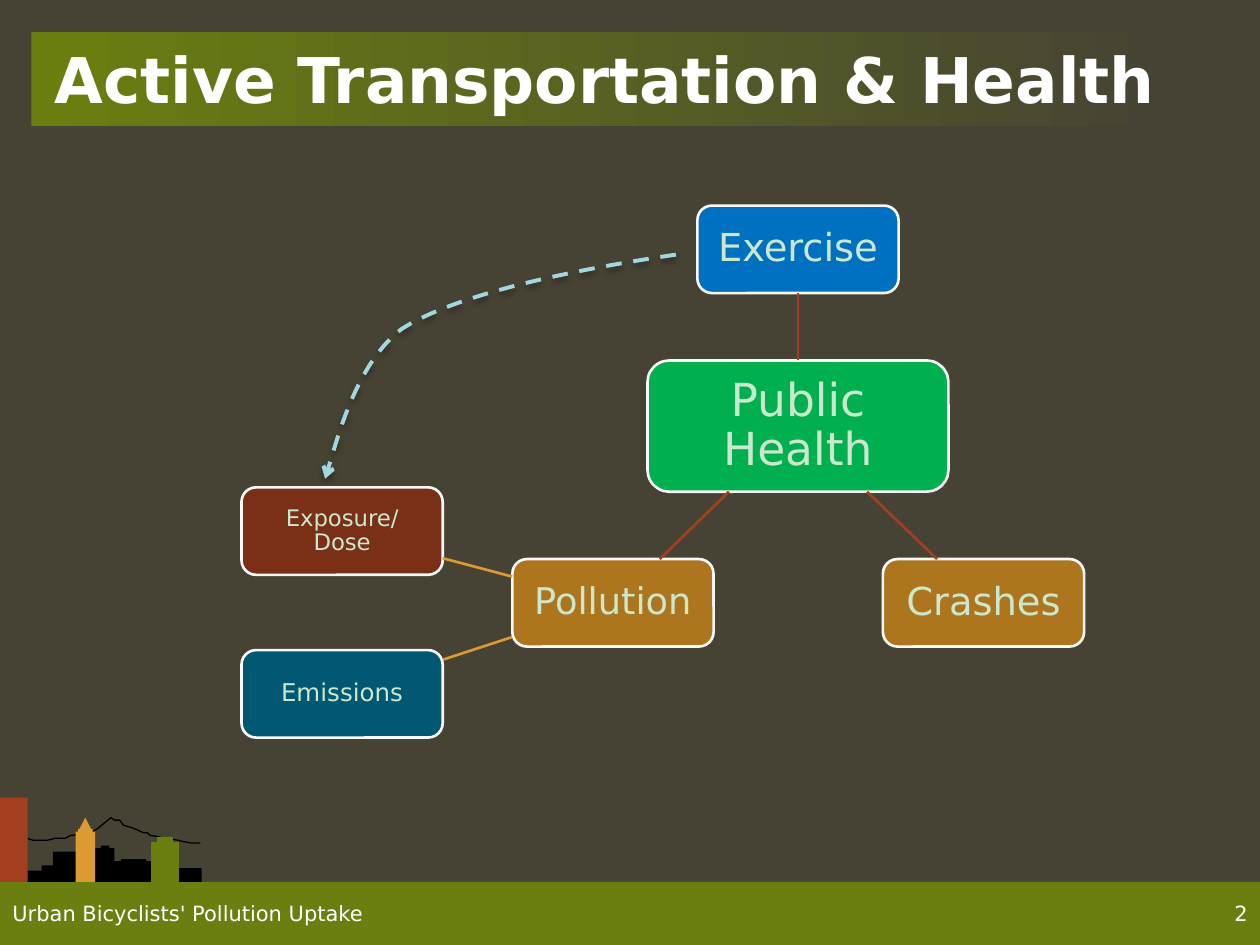
from lxml import etree
from pptx import Presentation
from pptx.dml.color import RGBColor
from pptx.enum.dml import MSO_LINE
from pptx.enum.shapes import MSO_CONNECTOR, MSO_SHAPE
from pptx.enum.text import MSO_ANCHOR, PP_ALIGN
from pptx.oxml.ns import qn
from pptx.util import Pt

RECT, ROUND, TRIANGLE = MSO_SHAPE.RECTANGLE, MSO_SHAPE.ROUNDED_RECTANGLE, MSO_SHAPE.ISOSCELES_TRIANGLE
STRAIGHT = MSO_CONNECTOR.STRAIGHT
DASH = MSO_LINE.DASH
MIDDLE = MSO_ANCHOR.MIDDLE
LEFT, CENTER, RIGHT = PP_ALIGN.LEFT, PP_ALIGN.CENTER, PP_ALIGN.RIGHT

FONT = "DejaVu Sans"
DARK = RGBColor(0x47, 0x43, 0x34)
OLIVE = RGBColor(0x6A, 0x7F, 0x10)
RUST = RGBColor(0xA3, 0x3F, 0x1F)
AMBER = RGBColor(0xDC, 0x9B, 0x32)
BLACK = RGBColor(0x00, 0x00, 0x00)
WHITE = RGBColor(0xFF, 0xFF, 0xFF)
BORDER = RGBColor(0xF8, 0xF8, 0xF8)
MINT = RGBColor(0xCC, 0xE8, 0xCC)
GREEN = RGBColor(0x00, 0xB0, 0x50)
BLUE = RGBColor(0x00, 0x70, 0xC0)
OCHRE = RGBColor(0xAD, 0x76, 0x1E)
TEAL = RGBColor(0x00, 0x58, 0x73)
BROWN = RGBColor(0x7A, 0x2F, 0x17)
SKY = RGBColor(0xA1, 0xD8, 0xE0)

prs = Presentation()
prs.slide_width, prs.slide_height = Pt(720), Pt(540)
s = prs.slides.add_slide(prs.slide_layouts[5])
s.background.fill.solid()
s.background.fill.fore_color.rgb = DARK


def add_box(kind, x, y, w, h, color):
    sp = s.shapes.add_shape(kind, Pt(x), Pt(y), Pt(w), Pt(h))
    sp.shadow.inherit = False
    sp.fill.solid()
    sp.fill.fore_color.rgb = color
    sp.line.fill.background()
    return sp


def write(sp, text, size, color=WHITE, bold=False, align=LEFT, inset=7.2, spacing=1.0):
    tf = sp.text_frame
    tf.word_wrap = True
    tf.vertical_anchor = MIDDLE
    tf.margin_left = tf.margin_right = Pt(inset)
    tf.margin_top = tf.margin_bottom = Pt(inset / 2)
    p = tf.paragraphs[0]
    p.text = text
    p.alignment = align
    p.line_spacing = spacing
    for r in p.runs:
        r.font.name, r.font.size, r.font.bold = FONT, Pt(size), bold
        r.font.color.rgb = color


# Footer bar and title banner
add_box(RECT, 0, 504, 720, 36, OLIVE)
banner = add_box(RECT, 18, 18, 648, 54, OLIVE)
banner.fill.gradient()
banner.fill.gradient_angle = 0
for stop, color in zip(banner.fill.gradient_stops, (OLIVE, DARK)):
    stop.color.rgb = color

# City skyline: black buildings, mountain ridge, coloured towers
GROUND = 504
for x, w, h in [(30.2, 19.4, 17.3), (14.4, 19.4, 6.5), (23.8, 19.4, 9.4), (46.1, 19.4, 19.4),
                (40.3, 19.4, 10.8), (57.6, 5, 20.7), (60.5, 30.2, 12), (69.1, 14.4, 13),
                (100.8, 14.4, 7.9)]:
    add_box(RECT, x, GROUND - h, w, h, BLACK)

ridge_points = [(0, 480.2), (15, 479), (19, 480.2), (27, 480.2), (32, 479), (37.5, 479),
                (40.3, 477.4), (42.5, 477.4), (46.8, 474.5), (50.4, 476.6), (55.4, 473.8),
                (59.8, 470.2), (63.4, 467.3), (65.5, 468.7), (68.4, 468.7), (70.6, 471.6),
                (75.6, 473), (82, 475.9), (84.2, 475.9), (85.7, 477.4), (90, 478),
                (92.9, 478.8), (98.6, 479.5), (105.1, 481), (108.7, 481.7), (114.5, 481.7)]
outline = [(Pt(x), Pt(y)) for x, y in ridge_points]
builder = s.shapes.build_freeform(*outline[0])
builder.add_line_segments(outline[1:], close=False)
ridge = builder.convert_to_shape()
ridge.shadow.inherit = False
ridge.fill.background()
ridge.line.color.rgb = BLACK
ridge.line.width = Pt(0.75)

add_box(TRIANGLE, 44.6, 467.3, 8.3, 8, AMBER)
for x, y, w, h, color in [(0, 455.8, 15.8, 48.2, RUST), (43.2, 475.2, 11.2, 28.8, AMBER),
                          (44.6, 473.8, 8.3, 9.4, AMBER), (86.4, 481, 15.8, 23, OLIVE),
                          (89.6, 478.2, 9.3, 25.8, OLIVE)]:
    add_box(RECT, x, y, w, h, color)

# Title, above the banner
title = s.shapes.title
title.left, title.top, title.width, title.height = Pt(24), Pt(12), Pt(672), Pt(66)
write(title, "Active Transportation & Health", 36, bold=True)
s.shapes._spTree.append(title._element)

# Topic boxes
nodes = {}
for text, x, y, w, h, color, size in [
    ("Public Health", 370, 206, 172, 75, GREEN, 26),
    ("Exercise", 398.5, 117.5, 115, 50, BLUE, 22),
    ("Crashes", 504.5, 319.5, 115, 50, OCHRE, 22),
    ("Pollution", 292.75, 319.5, 115, 50, OCHRE, 21),
    ("Emissions", 138, 371.5, 115, 50, TEAL, 14),
    ("Exposure/\vDose", 138, 278.5, 115, 50, BROWN, 13),
]:
    sp = add_box(ROUND, x, y, w, h, color)
    sp.line.color.rgb = BORDER
    sp.line.width = Pt(1.5)
    write(sp, text, size, MINT, align=CENTER, inset=4, spacing=0.9)
    nodes[text] = sp

# Links between boxes
for x1, y1, x2, y2, color in [(456, 206, 456, 167.5, RUST), (416.5, 281, 377, 319.5, RUST),
                              (495.5, 281, 535.5, 319.5, RUST), (292.75, 364, 253, 377, AMBER),
                              (292.75, 329.5, 253, 319, AMBER)]:
    link = s.shapes.add_connector(STRAIGHT, Pt(x1), Pt(y1), Pt(x2), Pt(y2))
    link.line.color.rgb = color
    link.line.width = Pt(1.5)
    etree.SubElement(link._element.spPr, qn("a:effectLst"))
    if x1 == x2:
        link.begin_connect(nodes["Public Health"], 0)
        link.end_connect(nodes["Exercise"], 2)

# Dashed curve from exercise to exposure: each three points make one Bezier segment
curve_points = [(386.2, 145.5), (337.7, 152.6), (263.5, 166.3), (229.7, 187.9),
                (203.8, 207.4), (185.8, 273.6), (185.8, 273.6)]
outline = [(Pt(x), Pt(y)) for x, y in curve_points]
builder = s.shapes.build_freeform(*outline[0])
builder.add_line_segments(outline[1:], close=False)
curve = builder.convert_to_shape()
curve.fill.background()
curve.line.color.rgb = SKY
curve.line.width = Pt(2.25)
curve.line.dash_style = DASH
spPr = curve._element.spPr
outline_path = next(spPr.iter(qn("a:path")))
lines = outline_path.findall(qn("a:lnTo"))
for i in range(0, len(lines), 3):
    bezier = etree.SubElement(outline_path, qn("a:cubicBezTo"))
    for line in lines[i:i + 3]:
        bezier.append(line[0])
        outline_path.remove(line)
etree.SubElement(spPr.find(qn("a:ln")), qn("a:tailEnd"), type="arrow")
effects = etree.SubElement(spPr, qn("a:effectLst"))
shadow = etree.SubElement(effects, qn("a:outerShdw"), blurRad=str(Pt(4)), dist=str(Pt(2)),
                          dir="5400000", rotWithShape="0")
shade = etree.SubElement(shadow, qn("a:srgbClr"), val=str(BLACK))
etree.SubElement(shade, qn("a:alpha"), val="40000")

# Footer text and slide number
for text, x, w, align in [("Urban Bicyclists' Pollution Uptake", 0, 300, LEFT),
                          ("2", 672, 48, RIGHT)]:
    write(s.shapes.add_textbox(Pt(x), Pt(504), Pt(w), Pt(36)), text, 12, align=align)

prs.save("out.pptx")
